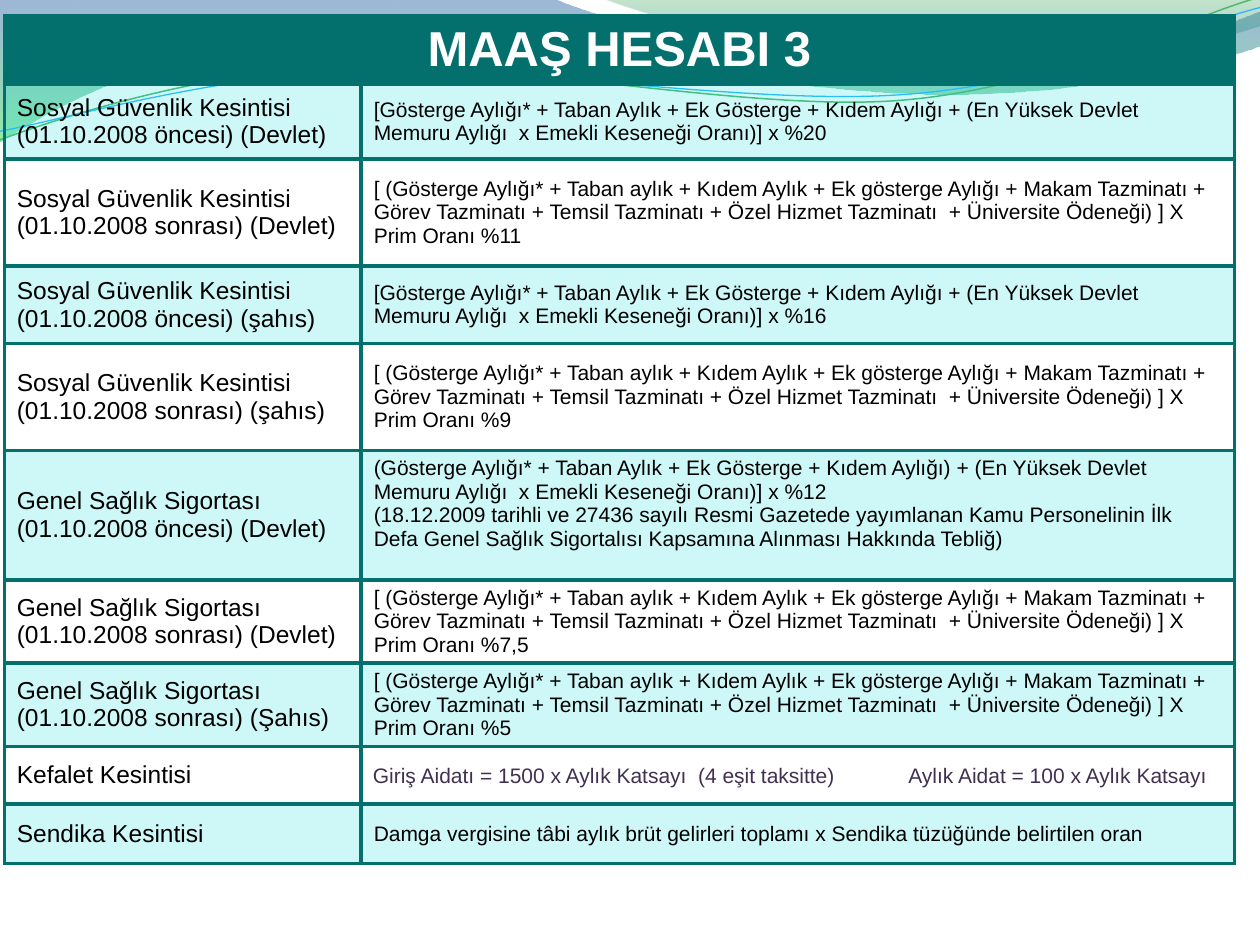
from lxml import etree
from pptx import Presentation
from pptx.dml.color import RGBColor
from pptx.enum.text import MSO_ANCHOR, PP_ALIGN
from pptx.oxml.ns import qn
from pptx.util import Pt

MIDDLE, TOP = MSO_ANCHOR.MIDDLE, MSO_ANCHOR.TOP
LEFT, CENTER = PP_ALIGN.LEFT, PP_ALIGN.CENTER
TEAL, AQUA, BLACK, WHITE, PURPLE = "03706E", "05E0DB", "000000", "FFFFFF", "403151"

WAVES = [
    {"points": [(0, 0), (317, -0.7), (343, 12, 478, 45, 546, 45), (614, 45, 690, 19, 720, 6.5),
                (721, 26), (708, 32, 626, 55, 537, 54), (447, 54, 275, 20, 185, 24.5),
                (93, 26, 33, 60, -0.7, 81.4)],
     "stops": [(0, "2960A7", 45), (1, "35DA5E", 55)]},
    {"points": [(345, -0.7), (366, 8, 491, 45, 554, 47), (616, 50, 692, 23, 720, 15), (720, 0)],
     "stops": [(0, "36A752", 30), (0.8, "2472D3", 45)]},
    {"points": [(-1.4, 63), (34.1, 51.7, 114.3, 29.4, 199.4, 29.9),
                (284.4, 30.5, 425.9, 67.2, 512.1, 64.7), (599.3, 62.3, 676.1, 25.9, 720.6, 15.6)],
     "line": ("50B86A", 0.85), "rotation": 357.3},
    {"points": [(-1.1, 58), (33.1, 53.6, 118.2, 32.6, 204.3, 32.7),
                (290.3, 33.7, 429.1, 63.8, 515.3, 61.4), (601.5, 59.4, 678.9, 30, 721.4, 21.3)],
     "line": ("31B6FD", 0.75), "rotation": 357.3},
]

TITLE = "MAAŞ HESABI 3"
BEFORE = ("[Gösterge Aylığı* + Taban Aylık + Ek Gösterge + Kıdem Aylığı + "
          "(En Yüksek Devlet Memuru Aylığı  x Emekli Keseneği Oranı)] x %")
AFTER = ("[ (Gösterge Aylığı* + Taban aylık + Kıdem Aylık + Ek gösterge Aylığı + Makam Tazminatı + "
         "Görev Tazminatı + Temsil Tazminatı + Özel Hizmet Tazminatı  + Üniversite Ödeneği) ] X Prim Oranı %")
SOCIAL = "Sosyal Güvenlik Kesintisi (01.10.2008 "
HEALTH = "Genel Sağlık Sigortası (01.10.2008 "
ROWS = [
    (43, SOCIAL + "öncesi) (Devlet)", [BEFORE + "20"], {}),
    (61, SOCIAL + "sonrası) (Devlet)", [AFTER + "11"], {}),
    (44.5, SOCIAL + "öncesi) (şahıs)", [BEFORE + "16"], {}),
    (61, SOCIAL + "sonrası) (şahıs)", [AFTER + "9"], {}),
    (74, HEALTH + "öncesi) (Devlet)",
     ["(Gösterge Aylığı* + Taban Aylık + Ek Gösterge + Kıdem Aylığı) + "
      "(En Yüksek Devlet Memuru Aylığı  x Emekli Keseneği Oranı)] x %12",
      "(18.12.2009 tarihli ve 27436 sayılı Resmi Gazetede yayımlanan Kamu Personelinin İlk "
      "Defa Genel Sağlık Sigortalısı Kapsamına Alınması Hakkında Tebliğ)"],
     {"margin_bottom": Pt(16.5)}),
    (47.5, HEALTH + "sonrası) (Devlet)", [AFTER + "7,5"], {}),
    (47.5, HEALTH + "sonrası) (Şahıs)", [AFTER + "5"], {}),
    (33, "Kefalet Kesintisi",
     ["Giriş Aidatı = 1500 x Aylık Katsayı  (4 eşit taksitte)\tAylık Aidat = 100 x Aylık Katsayı"],
     {"margin_left": Pt(6.7), "margin_right": Pt(0.7), "margin_top": Pt(0.7), "margin_bottom": 0}),
    (34, "Sendika Kesintisi",
     ["Damga vergisine tâbi aylık brüt gelirleri toplamı x Sendika tüzüğünde belirtilen oran"], {}),
]
TITLE_HEIGHT = 39
COLUMNS = (204, 499)
TABLE_LEFT, TABLE_TOP = 2.4, 9
TAB_STOP = 306


def color(value):
    return RGBColor.from_string(value)


def apply(target, values):
    for name, value in values.items():
        setattr(target, name, value)


def set_alpha(node, percent):
    etree.SubElement(node, qn("a:alpha"), val=str(percent * 1000))


def bend(wave, points):
    outline = next(wave._element.iter(qn("a:path")))
    segments = iter(outline.findall(qn("a:lnTo")))
    for point in points[1:]:
        segment = next(segments)
        if len(point) == 6:
            curve = etree.Element(qn("a:cubicBezTo"))
            segment.addprevious(curve)
            for corner in (segment, next(segments), next(segments)):
                curve.append(corner[0])
                outline.remove(corner)


def add_wave(page, points, stops=None, line=None, rotation=0):
    corners = [(Pt(point[i]), Pt(point[i + 1])) for point in points for i in range(0, len(point), 2)]
    builder = page.shapes.build_freeform(*corners[0])
    builder.add_line_segments(corners[1:], close=bool(stops))
    wave = builder.convert_to_shape()
    bend(wave, points)
    wave.rotation = rotation
    wave.shadow.inherit = False
    if stops:
        wave.line.fill.background()
        wave.fill.gradient()
        wave.fill.gradient_angle = 270
        for stop, (position, shade, alpha) in zip(wave.fill.gradient_stops, stops):
            stop.position = position
            stop.color.rgb = color(shade)
        nodes = list(wave._element.spPr.iter(qn("a:srgbClr")))
        for node, (position, shade, alpha) in zip(nodes, stops):
            set_alpha(node, alpha)
    else:
        wave.fill.background()
        wave.line.color.rgb = color(line[0])
        wave.line.width = Pt(line[1])


def style_cell(cell, fill=None, alpha=100):
    properties = cell._tc.get_or_add_tcPr()
    for side in ("lnL", "lnR", "lnT", "lnB"):
        border = etree.SubElement(properties, qn("a:" + side), w=str(Pt(2.25)))
        solid = etree.SubElement(border, qn("a:solidFill"))
        etree.SubElement(solid, qn("a:srgbClr"), val=TEAL)
    if not fill:
        cell.fill.background()
        return
    cell.fill.solid()
    cell.fill.fore_color.rgb = color(fill)
    if alpha < 100:
        set_alpha(properties.find(qn("a:solidFill")).find(qn("a:srgbClr")), alpha)


def write(cell, texts, size, shade=BLACK, bold=False, align=LEFT, anchor=MIDDLE):
    cell.vertical_anchor = anchor
    frame = cell.text_frame
    for index, text in enumerate(texts):
        para = frame.add_paragraph() if index else frame.paragraphs[0]
        para.alignment = align
        if "\t" in text:
            tabs = etree.SubElement(para._p.get_or_add_pPr(), qn("a:tabLst"))
            etree.SubElement(tabs, qn("a:tab"), pos=str(Pt(TAB_STOP)), algn="l")
        span = para.add_run()
        span.text = text
        apply(span.font, {"name": "Arial", "size": Pt(size), "bold": bold})
        span.font.color.rgb = color(shade)


def add_salary_table(page):
    heights = [TITLE_HEIGHT] + [row[0] for row in ROWS]
    frame = page.shapes.add_table(len(heights), len(COLUMNS), Pt(TABLE_LEFT), Pt(TABLE_TOP),
                                  Pt(sum(COLUMNS)), Pt(sum(heights)))
    table = frame.table
    apply(table, {"first_row": False, "horz_banding": False})
    for column, width in zip(table.columns, COLUMNS):
        column.width = Pt(width)
    for row, height in zip(table.rows, heights):
        row.height = Pt(height)
    header = table.cell(0, 0)
    header.merge(table.cell(0, 1))
    for cell in table.rows[0].cells:
        style_cell(cell, TEAL)
    write(header, [TITLE], 28, WHITE, True, CENTER, TOP)
    for index, (height, label, formula, margins) in enumerate(ROWS, 1):
        label_cell, formula_cell = table.rows[index].cells
        for cell in (label_cell, formula_cell):
            style_cell(cell, AQUA if index % 2 else None, 20)
        write(label_cell, [label], 14)
        write(formula_cell, formula, 12, PURPLE if label.startswith("Kefalet") else BLACK)
        apply(formula_cell, margins)


def main():
    deck = Presentation()
    apply(deck, {"slide_width": Pt(720), "slide_height": Pt(540)})
    page = deck.slides.add_slide(deck.slide_layouts[6])
    for wave in WAVES:
        add_wave(page, **wave)
    add_salary_table(page)
    deck.save("out.pptx")


if __name__ == "__main__":
    main()
